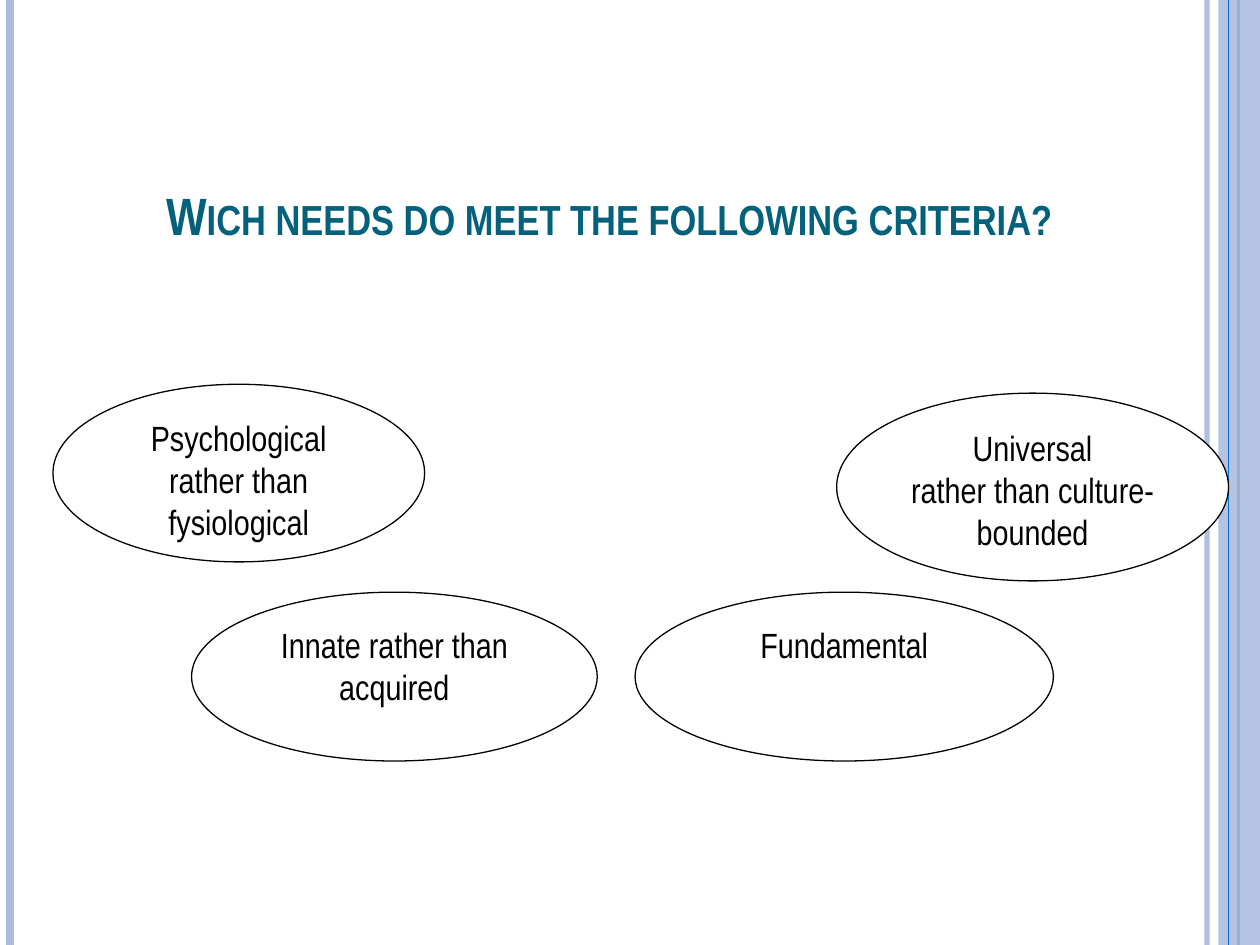
from lxml import etree
from pptx import Presentation
from pptx import util as u
from pptx.dml.color import RGBColor
from pptx.enum import shapes, text
from pptx.oxml.ns import qn

WIDTH, HEIGHT = 10, 7.5
COLORS = {"band": "ABBBDF", "blue": "0F6FC6", "title": "04617B", "ink": "000000", "paper": "FFFFFF"}
FONT = "Arial Narrow"

TITLE = "Wich needs do meet the following criteria?"
TITLE_AREA = (1.22, 1.23, 8.17, 1.25)
TITLE_FORMAT = {"name": FONT, "size": u.Pt(30), "bold": True}
BODY_FORMAT = {"name": FONT, "size": u.Pt(20), "bold": False}

LOWER_ROW, LOWER_HEIGHT = 4.7, 1.34
CRITERIA = [
    (["Psychological rather than fysiological"], (0.42, 3.05, 2.95, 1.41)),
    (["Innate rather than acquired"], (1.52, LOWER_ROW, 3.22, LOWER_HEIGHT)),
    (["Fundamental"], (5.04, LOWER_ROW, 3.32, LOWER_HEIGHT)),
    (["Universal", "rather than culture-bounded"], (6.64, 3.12, 3.11, 1.49)),
]

BACK_RULES = [(9.58, "band", 3, 93), (0.08, "band", 4.5, 100), (9.83, "blue", 1.5, 100)]
FRONT_RULES = [(9.75, "blue", 0.75, 100)]
BAND_AREA, BAND_OPACITY = (9.67, 0, 0.33, HEIGHT), 87


def rgb(name):
    return RGBColor.from_string(COLORS[name])


def inches(area):
    return [u.Inches(value) for value in area]


def set_opacity(shape, percent):
    color = next(shape._element.spPr.iter(qn("a:srgbClr")))
    etree.SubElement(color, qn("a:alpha")).set("val", str(percent * 1000))


def add_rules(page, rules):
    for x, color, weight, opacity in rules:
        rule = page.shapes.add_connector(
            shapes.MSO_CONNECTOR.STRAIGHT, *inches((x, 0, x, HEIGHT)))
        rule.line.color.rgb = rgb(color)
        rule.line.width = u.Pt(weight)
        etree.SubElement(rule._element.spPr, qn("a:effectLst"))
        if opacity < 100:
            set_opacity(rule, opacity)


def add_preset(page, kind, area, fill):
    shape = page.shapes.add_shape(kind, *inches(area))
    shape.shadow.inherit = False
    shape.fill.solid()
    shape.fill.fore_color.rgb = rgb(fill)
    return shape


def write(para, words, style, color):
    span = para.add_run()
    span.text = words
    for key, value in style.items():
        setattr(span.font, key, value)
    span.font.color.rgb = rgb(color)
    return span


def add_title(page):
    box = page.shapes.add_textbox(*inches(TITLE_AREA))
    frame = box.text_frame
    frame.word_wrap = True
    frame.vertical_anchor = text.MSO_ANCHOR.BOTTOM
    frame.margin_bottom = u.Inches(0.53)
    span = write(frame.paragraphs[0], TITLE, TITLE_FORMAT, "title")
    span.font._element.set("cap", "small")


def add_criterion(page, lines, area):
    oval = add_preset(page, shapes.MSO_SHAPE.OVAL, area, "paper")
    oval.line.color.rgb = rgb("ink")
    oval.line.width = u.Pt(0.75)
    frame = oval.text_frame
    frame.word_wrap = True
    frame.vertical_anchor = text.MSO_ANCHOR.TOP
    for index, words in enumerate(lines):
        para = frame.add_paragraph() if index else frame.paragraphs[0]
        para.alignment = text.PP_ALIGN.CENTER
        write(para, words, BODY_FORMAT, "ink")


def main():
    deck = Presentation()
    deck.slide_width, deck.slide_height = inches((WIDTH, HEIGHT))
    page = deck.slides.add_slide(deck.slide_layouts[6])
    add_rules(page, BACK_RULES)
    band = add_preset(page, shapes.MSO_SHAPE.RECTANGLE, BAND_AREA, "band")
    band.line.fill.background()
    set_opacity(band, BAND_OPACITY)
    add_rules(page, FRONT_RULES)
    add_title(page)
    for lines, area in CRITERIA:
        add_criterion(page, lines, area)
    deck.save("out.pptx")


if __name__ == "__main__":
    main()
